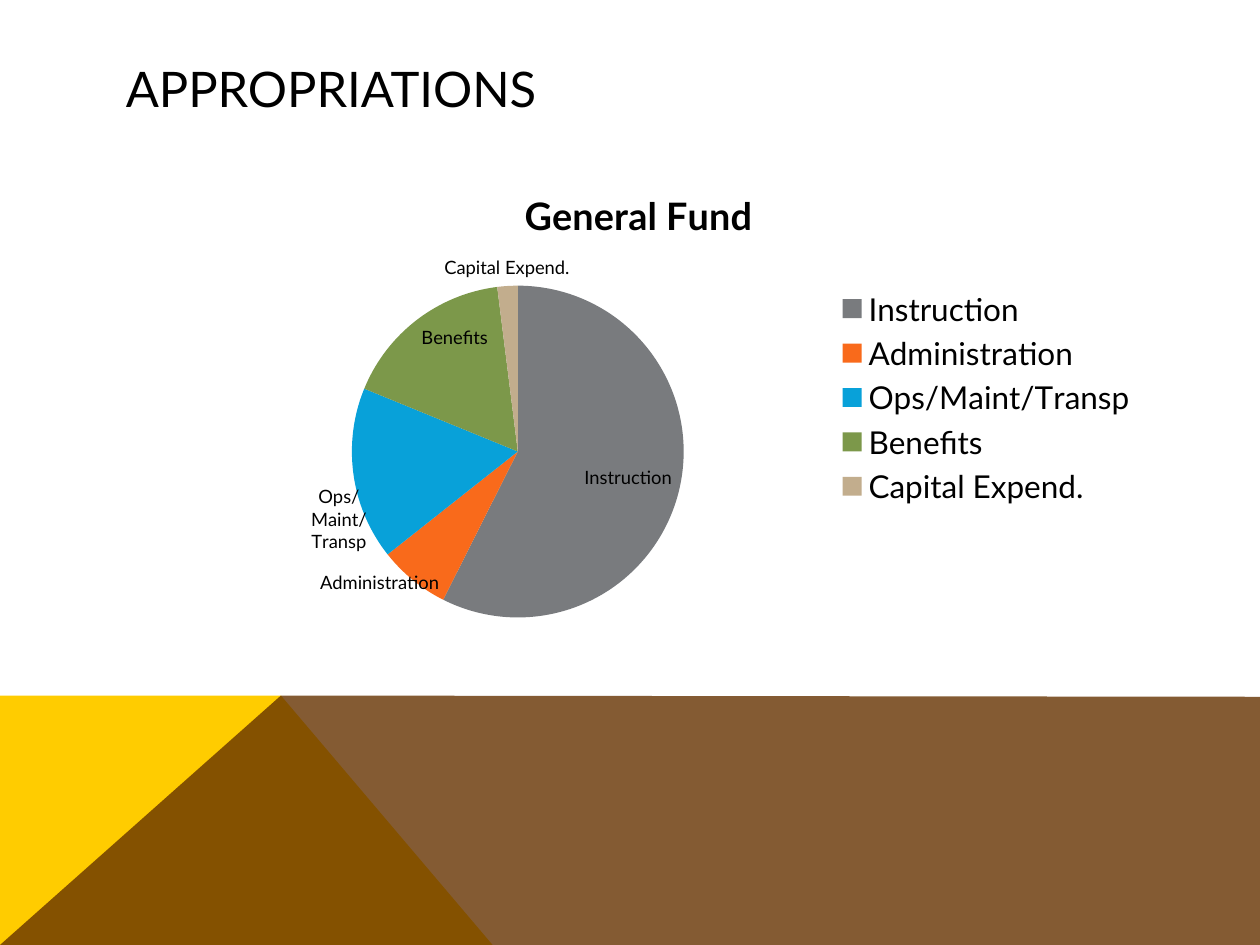
"""Build the appropriations slide with a pie chart of the general fund."""
from dataclasses import dataclass
from typing import Optional

from lxml import etree
from pptx import Presentation
from pptx.chart import data as chart_data
from pptx.dml import color
from pptx.enum import chart as chart_enum
from pptx.enum import text
from pptx.oxml import ns
from pptx.util import Inches, Pt

FONT = "Lato"
COLORS = {
    "yellow": "FFCC00",
    "brown": "663300",
    "black": "000000",
    "gray": "797B7E",
    "orange": "F96A1B",
    "blue": "08A1D9",
    "green": "7C984A",
    "tan": "C2AD8D",
}
INSIDE = chart_enum.XL_LABEL_POSITION.INSIDE_END
OUTSIDE = chart_enum.XL_LABEL_POSITION.OUTSIDE_END


@dataclass
class Band:
    points: list
    fill: str
    opacity: int = 100


@dataclass
class Slice:
    name: str
    value: int
    fill: str
    outside: bool = False
    shift: Optional[tuple] = None
    label: Optional[str] = None


BANDS = [
    Band([(0, 7.5), (0, 5.52), (2.23, 5.52), (3.91, 7.5)], "yellow"),
    Band([(0, 7.5), (2.23, 5.52), (10, 5.53), (10, 7.5)], "brown", 80),
]
SLICES = [
    Slice("Instruction", 58, "gray"),
    Slice("Administration", 7, "orange", True, (0.03, -0.03)),
    Slice("Ops/Maint/Transp", 17, "blue", True, (0.02, 0.02), "Ops/\nMaint/\nTransp"),
    Slice("Benefits", 17, "green"),
    Slice("Capital Expend.", 2, "tan", True),
]


def rgb(name: str) -> color.RGBColor:
    """Return a named colour."""
    return color.RGBColor.from_string(COLORS[name])


def style_font(font, size: float, bold: bool = False) -> None:
    """Give a font the slide's face and colour."""
    font.name, font.size, font.bold = FONT, Pt(size), bold
    font.color.rgb = rgb("black")


def draw_band(page, band: Band) -> None:
    """Draw one filled outline at the foot of the page."""
    corners = [(Inches(x), Inches(y)) for x, y in band.points]
    builder = page.shapes.build_freeform(*corners[0])
    builder.add_line_segments(corners[1:], close=True)
    shape = builder.convert_to_shape()
    shape.shadow.inherit = False
    shape.fill.solid()
    shape.fill.fore_color.rgb = rgb(band.fill)
    shape.line.fill.background()
    if band.opacity < 100:
        tone = shape._element.spPr.find(".//" + ns.qn("a:srgbClr"))
        etree.SubElement(tone, ns.qn("a:alpha"), val=str(band.opacity * 1000))


def set_layout(parent, index: int, **settings) -> None:
    """Place a chart part by fractions of the chart area."""
    for old in parent.findall(ns.qn("c:layout")):
        parent.remove(old)
    layout = etree.Element(ns.qn("c:layout"))
    manual = etree.SubElement(layout, ns.qn("c:manualLayout"))
    for tag, value in settings.items():
        etree.SubElement(manual, ns.qn("c:" + tag), val=str(value))
    parent.insert(index, layout)


def draw_title(page, words: str) -> None:
    """Write the page title."""
    box = page.shapes.add_textbox(Inches(0.9), Inches(0.4), Inches(8.22), Inches(0.6))
    box.text_frame.word_wrap = True
    box.text_frame.vertical_anchor = text.MSO_ANCHOR.MIDDLE
    para = box.text_frame.paragraphs[0]
    para.text = words
    style_font(para.font, 28)


def style_slice(series, index: int, part: Slice) -> None:
    """Colour one slice and place its own label where it needs one."""
    point = series.points[index]
    point.format.fill.solid()
    point.format.fill.fore_color.rgb = rgb(part.fill)
    point.format.line.fill.background()
    if not part.outside:
        return
    label = point.data_label
    if part.label:
        label.text_frame.text = part.label
        for para in label.text_frame.paragraphs:
            style_font(para.font, 10.5)
    else:
        style_font(label.font, 10.5)
    label.position = OUTSIDE
    element = series._element.find(f".//{ns.qn('c:dLbl')}[{ns.qn('c:idx')}][@val]")
    for entry in series._element.iter(ns.qn("c:dLbl")):
        if entry.find(ns.qn("c:idx")).get("val") == str(index):
            element = entry
    element.find(ns.qn("c:showVal")).set("val", "0")
    element.find(ns.qn("c:showCatName")).set("val", "1")
    if part.shift:
        set_layout(element, 1, x=part.shift[0], y=part.shift[1])


def draw_chart(page, name: str, slices: list) -> None:
    """Draw the pie chart with its title, legend and labels."""
    source = chart_data.CategoryChartData()
    source.categories = [part.name for part in slices]
    source.add_series(name, [part.value for part in slices])
    chart = page.shapes.add_chart(
        chart_enum.XL_CHART_TYPE.PIE,
        Inches(0.9), Inches(1.2), Inches(8.23), Inches(3.91), source,
    ).chart
    style_font(chart.font, 18)
    chart.has_title = True
    heading = chart.chart_title.text_frame
    heading.text = name
    style_font(heading.paragraphs[0].font, 21.6, True)
    set_layout(chart.chart_title._element, 1, xMode="edge", yMode="edge", x=0.39, y=0.06)
    chart.has_legend = True
    chart.legend.position = chart_enum.XL_LEGEND_POSITION.RIGHT
    chart.legend.include_in_layout = False
    style_font(chart.legend.font, 18)

    plot = chart.plots[0]
    plot.vary_by_categories = True
    series = plot.series[0]
    labels = series.data_labels
    labels.show_value = False
    labels.show_category_name = True
    labels.position = INSIDE
    style_font(labels.font, 10.5)
    for index, part in enumerate(slices):
        style_slice(series, index, part)
    area = chart._chartSpace.find(".//" + ns.qn("c:plotArea"))
    set_layout(area, 0, layoutTarget="inner", xMode="edge", yMode="edge",
               x=0.23, y=0.27, w=0.32, h=0.68)


def main() -> None:
    """Build and save the deck."""
    deck = Presentation()
    deck.slide_width, deck.slide_height = Inches(10), Inches(7.5)
    page = deck.slides.add_slide(deck.slide_layouts[6])
    for band in BANDS:
        draw_band(page, band)
    draw_title(page, "APPROPRIATIONS")
    draw_chart(page, "General Fund", SLICES)
    deck.save("out.pptx")


if __name__ == "__main__":
    main()
